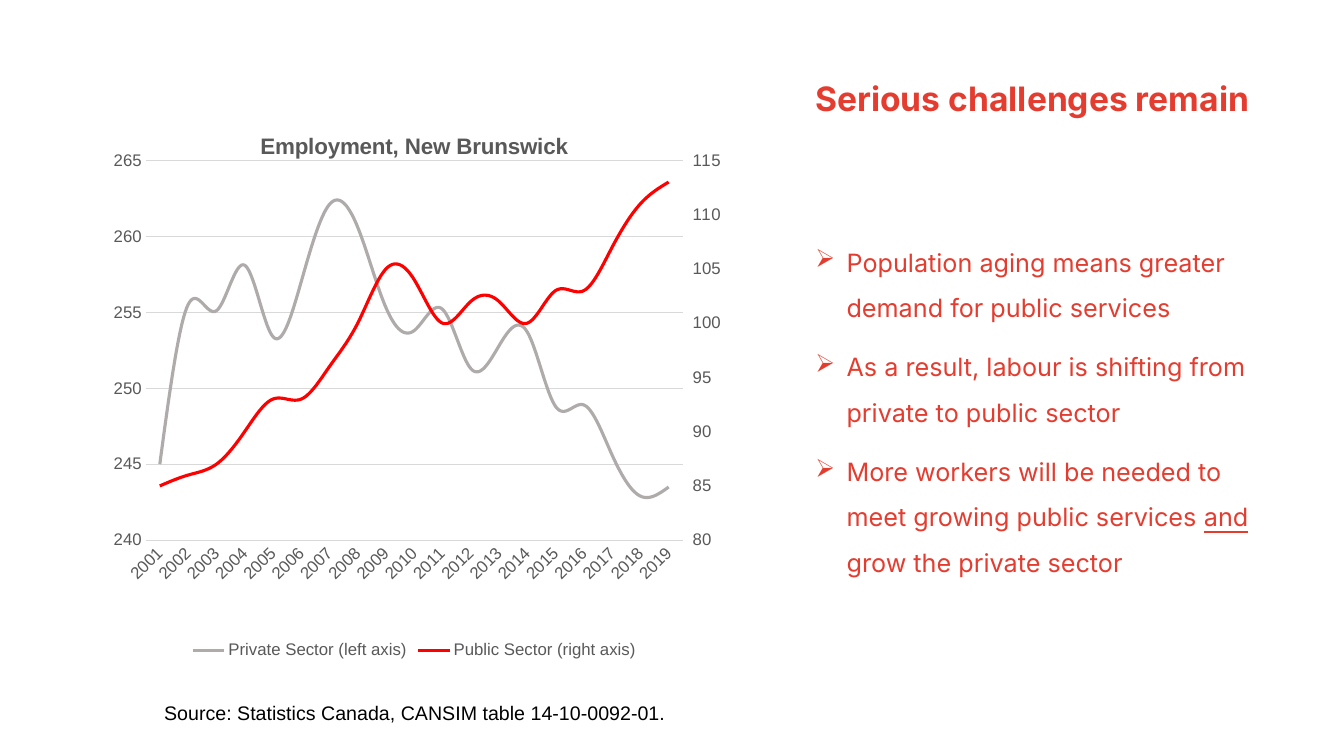
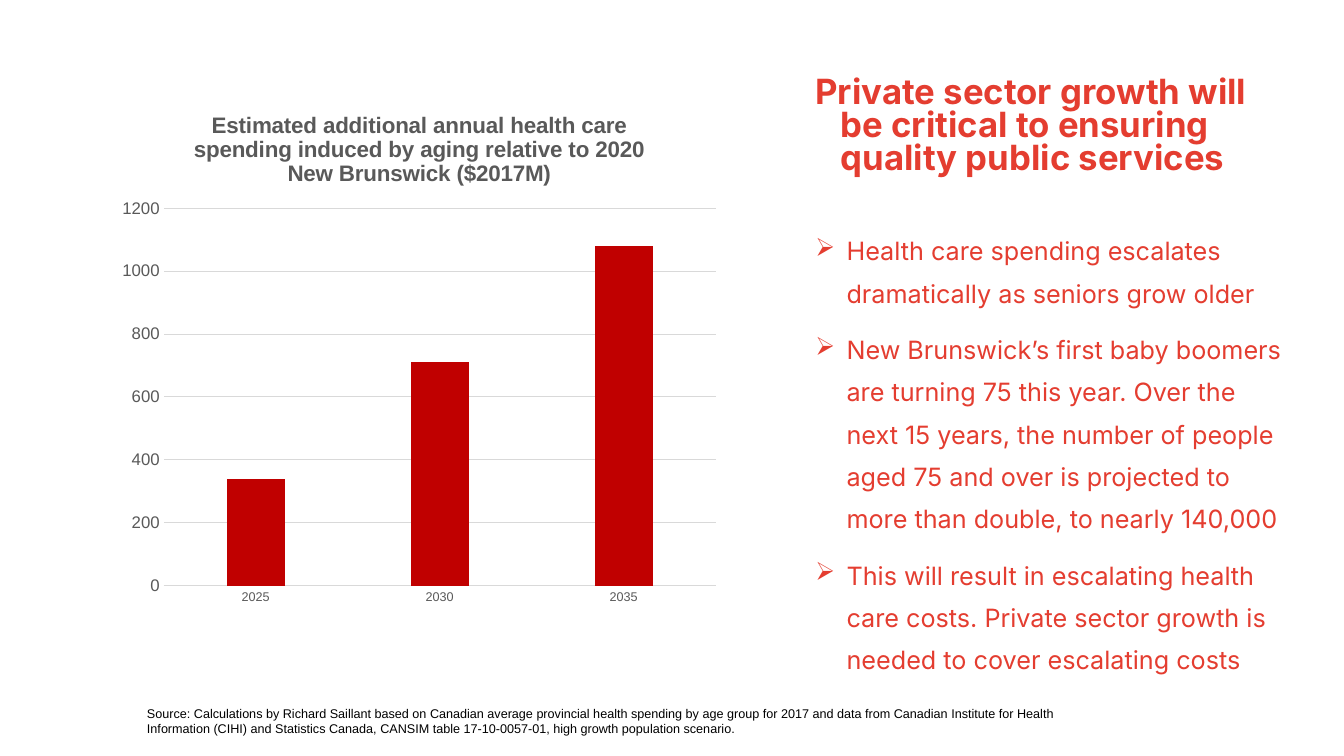
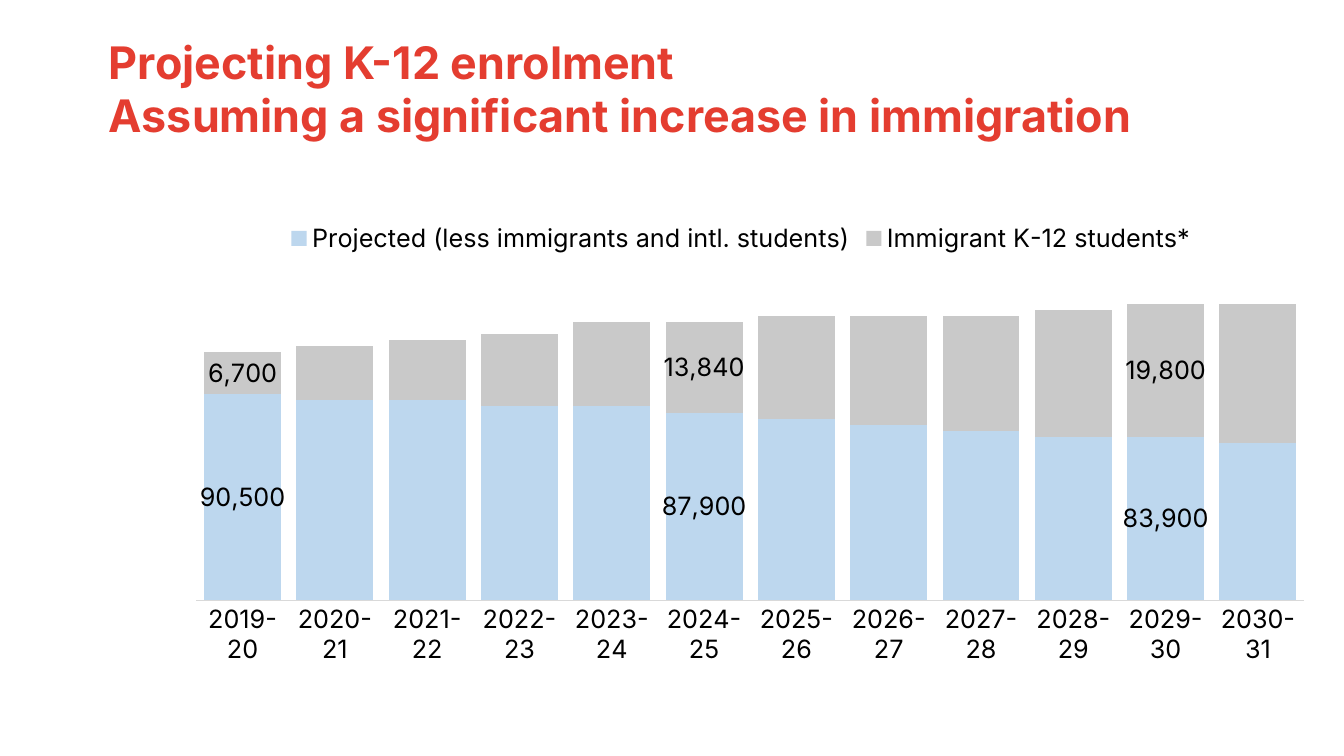
from copy import deepcopy
from dataclasses import dataclass, field
from typing import NamedTuple, Optional

from pptx import Presentation
from pptx.chart.axis import ValueAxis
from pptx.chart.chart import Chart
from pptx.chart.data import CategoryChartData
from pptx.chart.series import _BaseCategorySeries
from pptx.dml.color import RGBColor
from pptx.enum.chart import XL_CHART_TYPE, XL_LABEL_POSITION, XL_LEGEND_POSITION, XL_TICK_MARK
from pptx.enum.text import MSO_ANCHOR, MSO_AUTO_SIZE, PP_ALIGN
from pptx.oxml import parse_xml
from pptx.oxml.ns import nsdecls, qn
from pptx.slide import Slide
from pptx.text.text import Font, TextFrame, _Paragraph
from pptx.util import Emu, Inches, Pt

SLIDE_WIDTH, SLIDE_HEIGHT = Inches(13.33), Inches(7.5)
COLUMNS, ROWS = 40, 30
COLORS = {
    "brand": "E43D30", "text": "000000", "axis": "595959", "grid": "D9D9D9",
    "private": "AFABAB", "public": "FF0000", "spending": "C00000",
    "projected": "BDD7EE", "immigrant": "C9C9C9",
}
DISPLAY, PLAIN = "Inter", "Arial"
TITLE_ONLY = 5


class Box(NamedTuple):
    """A place on the grid, in columns and rows."""
    column: float
    row: float
    columns: float
    rows: float

    def emu(self) -> tuple[Emu, Emu, Emu, Emu]:
        across, down = SLIDE_WIDTH / COLUMNS, SLIDE_HEIGHT / ROWS
        return (Emu(round(self.column * across)), Emu(round(self.row * down)),
                Emu(round(self.columns * across)), Emu(round(self.rows * down)))


class Style(NamedTuple):
    size: float
    face: str
    color: str
    bold: bool = False


class Span(NamedTuple):
    text: str
    underline: bool = False


class PlotArea(NamedTuple):
    """Inner plot area, as shares of the chart's size."""
    x: float
    y: float
    w: float
    h: float


@dataclass
class Series:
    name: str
    color: str
    values: list[float]
    labels: dict[int, str] = field(default_factory=dict)


@dataclass
class ChartPlan:
    kind: XL_CHART_TYPE
    box: Box
    plot_area: PlotArea
    categories: list[str]
    series: list[Series]
    category_style: Style
    title: str = ""
    legend: Optional[XL_LEGEND_POSITION] = None
    legend_style: Optional[Style] = None


SIDE_TITLE = Box(23.22, 2.88, 15.27, 5.2)
WIDE_TITLE = Box(2.94, 1.16, 36.39, 5.2)
BULLET = Style(18, DISPLAY, "brand")
AXIS = Style(12, PLAIN, "axis")
CHART_TITLE = Style(16, PLAIN, "axis", True)
ENROLMENT = Style(18, DISPLAY, "text")


def rgb(name: str) -> RGBColor:
    return RGBColor.from_string(COLORS[name])


def apply_style(font: Font, style: Style) -> None:
    font.size, font.name, font.bold = Pt(style.size), style.face, style.bold
    font.color.rgb = rgb(style.color)


def add_run(paragraph: _Paragraph, span: Span, style: Style) -> None:
    run = paragraph.add_run()
    run.text = span.text
    apply_style(run.font, style)
    if span.underline:
        run.font.underline = True


def next_paragraph(frame: TextFrame, index: int) -> _Paragraph:
    return frame.add_paragraph() if index else frame.paragraphs[0]


def set_indent(paragraph: _Paragraph, margin: float, first: float) -> None:
    properties = paragraph._p.get_or_add_pPr()
    properties.set("marL", str(Inches(margin)))
    properties.set("indent", str(Inches(first)))


def set_title(slide: Slide, box: Box, lines: list[str], size: float,
              hanging: bool = False, spacing: float = 1.0) -> None:
    title = slide.shapes.title
    title.left, title.top, title.width, title.height = box.emu()
    frame = title.text_frame
    frame.word_wrap, frame.auto_size = True, MSO_AUTO_SIZE.NONE
    frame.vertical_anchor = MSO_ANCHOR.TOP
    for index, line in enumerate(lines):
        paragraph = next_paragraph(frame, index)
        if hanging:
            set_indent(paragraph, 0.5, -0.25)
        paragraph.alignment, paragraph.line_spacing = PP_ALIGN.LEFT, spacing
        add_run(paragraph, Span(line), Style(size, DISPLAY, "brand", True))


def add_text_frame(slide: Slide, box: Box) -> TextFrame:
    frame = slide.shapes.add_textbox(*box.emu()).text_frame
    frame.word_wrap = True
    return frame


def add_bullets(slide: Slide, box: Box, items: list[list[Span]], spacing: float) -> None:
    frame = add_text_frame(slide, box)
    for index, spans in enumerate(items):
        paragraph = next_paragraph(frame, index)
        set_indent(paragraph, 0.56, -0.31)
        properties = paragraph._p.get_or_add_pPr()
        properties.append(parse_xml(
            f'<a:buClr {nsdecls("a")}><a:srgbClr val="{COLORS["brand"]}"/></a:buClr>'))
        properties.append(parse_xml(f'<a:buChar {nsdecls("a")} char="➢"/>'))
        paragraph.line_spacing = spacing
        if index:
            paragraph.space_before = Pt(10)
        for span in spans:
            add_run(paragraph, span, BULLET)


def add_source(slide: Slide, box: Box, text: str, size: float) -> None:
    paragraph = add_text_frame(slide, box).paragraphs[0]
    add_run(paragraph, Span(text), Style(size, PLAIN, "text"))


def set_plot_area(chart: Chart, area: PlotArea) -> None:
    plot_area = chart._chartSpace.chart.plotArea
    for layout in plot_area.findall(qn("c:layout")):
        plot_area.remove(layout)
    shares = "".join(f'<c:{key} val="{value}"/>' for key, value in area._asdict().items())
    plot_area.insert(0, parse_xml(
        f'<c:layout {nsdecls("c")}><c:manualLayout><c:layoutTarget val="inner"/>'
        f'<c:xMode val="edge"/><c:yMode val="edge"/>{shares}</c:manualLayout></c:layout>'))


def format_series(series: _BaseCategorySeries, plan: Series, is_line: bool) -> None:
    if is_line:
        series.smooth = True
        series.format.line.width = Pt(2.25)
        series.format.line.color.rgb = rgb(plan.color)
    else:
        series.format.fill.solid()
        series.format.fill.fore_color.rgb = rgb(plan.color)
    for index, text in plan.labels.items():
        label = series.points[index].data_label
        add_run(label.text_frame.paragraphs[0], Span(text), ENROLMENT)
        label.position = XL_LABEL_POSITION.CENTER


def add_chart(slide: Slide, plan: ChartPlan) -> Chart:
    data = CategoryChartData()
    data.categories = plan.categories
    for series in plan.series:
        data.add_series(series.name, series.values)
    chart = slide.shapes.add_chart(plan.kind, *plan.box.emu(), data).chart
    apply_style(chart.font, Style(10, PLAIN, "text"))
    chart.has_title = bool(plan.title)
    if plan.title:
        add_run(chart.chart_title.text_frame.paragraphs[0], Span(plan.title), CHART_TITLE)
        chart.chart_title.include_in_layout = False
    chart.has_legend = plan.legend is not None
    if plan.legend is not None:
        chart.legend.position = plan.legend
        chart.legend.include_in_layout = False
        apply_style(chart.legend.font, plan.legend_style)
    set_plot_area(chart, plan.plot_area)
    chart.plots[0].vary_by_categories = False
    for series, series_plan in zip(chart.plots[0].series, plan.series):
        format_series(series, series_plan, plan.kind == XL_CHART_TYPE.LINE)
    category_axis = chart.category_axis
    category_axis.major_tick_mark = XL_TICK_MARK.NONE
    category_axis.format.line.color.rgb = rgb("grid")
    category_axis.format.line.width = Pt(0.75)
    apply_style(category_axis.tick_labels.font, plan.category_style)
    return chart


def set_scale(axis: ValueAxis, low: float, high: float, step: float) -> None:
    axis.minimum_scale, axis.maximum_scale, axis.major_unit = low, high, step


def format_value_axis(axis: ValueAxis) -> None:
    axis.major_tick_mark = XL_TICK_MARK.NONE
    axis.format.line.fill.background()
    axis.has_major_gridlines = True
    axis.major_gridlines.format.line.color.rgb = rgb("grid")
    axis.major_gridlines.format.line.width = Pt(0.75)
    axis.tick_labels.number_format = "0"
    axis.tick_labels.number_format_is_linked = False
    apply_style(axis.tick_labels.font, AXIS)


def add_right_axis(chart: Chart) -> ValueAxis:
    """Move the last series to a second plot with its own axis on the right."""
    left_plot = chart.plots[0]._element
    right_plot = deepcopy(left_plot)
    left_plot.remove(left_plot.findall(qn("c:ser"))[-1])
    for series in right_plot.findall(qn("c:ser"))[:-1]:
        right_plot.remove(series)
    left_plot.addnext(right_plot)

    category, value = (deepcopy(axis._element) for axis in (chart.category_axis, chart.value_axis))
    ids = {"category": "5001", "value": "5002"}
    for reference, number in zip(right_plot.findall(qn("c:axId")), ids.values()):
        reference.set("val", number)
    for axis, own, other in ((category, "category", "value"), (value, "value", "category")):
        axis.find(qn("c:axId")).set("val", ids[own])
        axis.find(qn("c:crossAx")).set("val", ids[other])
    value.find(qn("c:axPos")).set("val", "r")
    value.find(qn("c:crosses")).set("val", "max")
    chart.value_axis._element.addnext(value)
    value.addnext(category)
    category.find(qn("c:delete")).set("val", "1")
    right_axis = ValueAxis(value)
    right_axis.has_major_gridlines = False
    right_axis.major_tick_mark = XL_TICK_MARK.OUTSIDE
    return right_axis


def build_challenges(slide: Slide) -> None:
    set_title(slide, SIDE_TITLE, ["Serious challenges remain"], 24, hanging=True)
    add_bullets(slide, Box(23.22, 9, 15.27, 17.32), [
        [Span("Population aging means greater demand for public services")],
        [Span("As a result, labour is shifting from private to public sector")],
        [Span("More workers will be needed to meet growing public services "),
         Span("and", True), Span(" grow the private sector")],
    ], 1.5)
    add_source(slide, Box(4.59, 27.6, 26.91, 1.36),
               "Source: Statistics Canada, CANSIM table 14-10-0092-01.", 14)
    chart = add_chart(slide, ChartPlan(
        XL_CHART_TYPE.LINE, Box(3.12, 4.44, 18.42, 21.88), PlotArea(0.066, 0.088, 0.868, 0.689),
        [str(year) for year in range(2001, 2020)],
        [Series("Private Sector (left axis)", "private",
                [245, 255.5, 255.1, 258.1, 253.4, 257, 262.1, 260.6, 255.3, 253.8,
                 255.2, 251.3, 252.8, 253.7, 248.8, 248.9, 245.6, 242.9, 243.5]),
         Series("Public Sector (right axis)", "public",
                [85, 86, 87, 90, 93, 93, 96, 100, 105, 104,
                 100, 102, 102, 100, 103, 103, 107, 111, 113])],
        AXIS, "Employment, New Brunswick", XL_LEGEND_POSITION.BOTTOM, AXIS))
    chart.category_axis._element.txPr.bodyPr.set("rot", "-2700000")
    format_value_axis(chart.value_axis)
    set_scale(chart.value_axis, 240, 265, 5)
    set_scale(add_right_axis(chart), 80, 115, 5)


def build_spending(slide: Slide) -> None:
    set_title(slide, SIDE_TITLE,
              ["Private sector growth will be critical to ensuring quality public services"],
              24.8, hanging=True, spacing=0.8)
    add_bullets(slide, Box(23.22, 8.68, 15.27, 19.08), [
        [Span("Health care spending escalates dramatically as seniors grow older")],
        [Span("New Brunswick’s first baby boomers are turning 75 this year. Over the next 15 years, "
              "the number of people aged 75 and over is projected to more than double, "
              "to nearly 140,000")],
        [Span("This will result in escalating health care costs. Private sector growth is needed "
              "to cover escalating costs")],
    ], 1.4)
    chart = add_chart(slide, ChartPlan(
        XL_CHART_TYPE.COLUMN_CLUSTERED, Box(3.27, 3.6, 18.42, 20.76),
        PlotArea(0.087, 0.225, 0.892, 0.721), ["2025", "2030", "2035"],
        [Series("Series 1", "spending", [340, 710, 1080])], Style(9, PLAIN, "axis"),
        "Estimated additional annual health care spending induced by aging "
        "relative to 2020 New Brunswick ($2017M)"))
    chart.plots[0].gap_width, chart.plots[0].overlap = 219, -27
    format_value_axis(chart.value_axis)
    set_scale(chart.value_axis, 0, 1200, 200)
    add_source(slide, Box(4.08, 27.8, 29.37, 1.6),
               "Source: Calculations by Richard Saillant based on Canadian average provincial health "
               "spending by age group for 2017 and data from Canadian Institute for Health "
               "Information (CIHI) and Statistics Canada, CANSIM table 17-10-0057-01, "
               "high growth population scenario.", 9)


def build_enrolment(slide: Slide) -> None:
    set_title(slide, WIDE_TITLE, ["Projecting K-12 enrolment",
                                  "Assuming a significant increase in immigration"], 32)
    chart = add_chart(slide, ChartPlan(
        XL_CHART_TYPE.COLUMN_STACKED, Box(4.44, 8.36, 35.22, 20.48),
        PlotArea(0.04, 0.098, 0.936, 0.657),
        [f"{year}-{year % 100 + 1}" for year in range(2019, 2031)],
        [Series("Projected (less immigrants and intl. students)", "projected",
                [100, 99, 99, 98, 98, 97, 96, 95, 94, 93, 93, 92],
                {0: "90,500", 5: "87,900", 10: "83,900"}),
         Series("Immigrant K-12 students*", "immigrant",
                [7, 9, 10, 12, 14, 15, 17, 18, 19, 21, 22, 23],
                {0: "6,700", 5: "13,840", 10: "19,800"})],
        ENROLMENT, legend=XL_LEGEND_POSITION.TOP, legend_style=ENROLMENT))
    chart.plots[0].gap_width, chart.plots[0].overlap = 20, 100
    chart.value_axis.has_major_gridlines = False
    chart.value_axis.visible = False
    set_scale(chart.value_axis, 66, 122, 10)


def main() -> None:
    presentation = Presentation()
    presentation.slide_width, presentation.slide_height = SLIDE_WIDTH, SLIDE_HEIGHT
    for build in (build_challenges, build_spending, build_enrolment):
        build(presentation.slides.add_slide(presentation.slide_layouts[TITLE_ONLY]))
    presentation.save("out.pptx")


if __name__ == "__main__":
    main()
